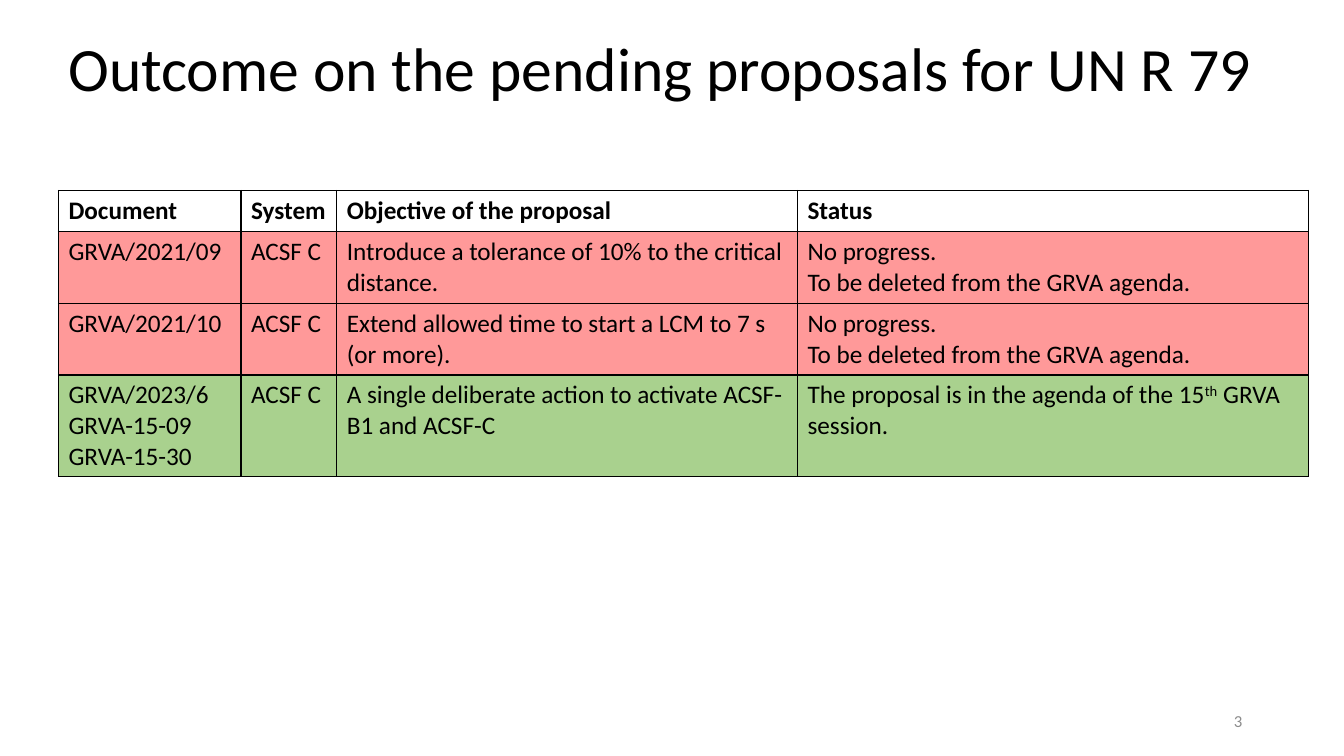
from lxml import etree
from pptx import Presentation
from pptx.dml.color import RGBColor
from pptx.enum.text import MSO_ANCHOR as Anchor, PP_ALIGN as Align
from pptx.oxml import parse_xml
from pptx.oxml.ns import nsdecls, qn
from pptx.util import Inches, Pt

BLACK, GREY, WHITE = "000000", "8C8C8C", "FFFFFF"
RED, GREEN = "FF9999", "A9D18E"


def rgb(color):
    return RGBColor.from_string(color)


def add_run(p, text, size, color=BLACK, bold=False):
    r = p.add_run()
    r.text = text
    r.font.name = "Calibri"
    r.font.size = Pt(size)
    r.font.bold = bold
    r.font.color.rgb = rgb(color)
    return r


prs = Presentation()
prs.slide_width, prs.slide_height = Inches(13.33), Inches(7.5)
s = prs.slides.add_slide(prs.slide_layouts[6])

# Title and slide number
for text, box, size, color, align, spacing in [
    ("Outcome on the pending proposals for UN R 79",
     (0.58, 0.31, 12.09, 0.79), 44, BLACK, Align.LEFT, 0.9),
    ("3", (9.42, 6.95, 3, 0.4), 12, GREY, Align.RIGHT, 1.0),
]:
    tf = s.shapes.add_textbox(*[Inches(v) for v in box]).text_frame
    tf.word_wrap = True
    tf.vertical_anchor = Anchor.MIDDLE
    p = tf.paragraphs[0]
    p.alignment = align
    p.line_spacing = spacing
    add_run(p, text, size, color)

# Proposals: fill, then one list of paragraphs per cell.
# "|" is a line break, text between "^" marks is superscript.
no_progress = ["No progress.", "To be deleted from the GRVA agenda."]
proposals = [
    (WHITE, [["Document"], ["System"], ["Objective of the proposal"], ["Status"]]),
    (RED, [["GRVA/2021/09"], ["ACSF C"],
           ["Introduce a tolerance of 10% to the critical distance."], no_progress]),
    (RED, [["GRVA/2021/10"], ["ACSF C"],
           ["Extend allowed time to start a LCM to 7 s |(or more)."], no_progress]),
    (GREEN, [["GRVA/2023/6", "GRVA-15-09", "GRVA-15-30"], ["ACSF C"],
             ["A single deliberate action to activate ACSF-B1 and ACSF-C"],
             ["The proposal is in the agenda of the 15^th^ GRVA session."]]),
]
col_widths = [1.81, 0.95, 4.57, 5.07]
row_heights = [0.41, 0.71, 0.71, 1.01]

table = s.shapes.add_table(
    len(row_heights), len(col_widths), Inches(0.58), Inches(1.89),
    Inches(sum(col_widths)), Inches(sum(row_heights))).table
table.horz_banding = False
for column, width in zip(table.columns, col_widths):
    column.width = Inches(width)
for row, height in zip(table.rows, row_heights):
    row.height = Inches(height)

for i, (fill, contents) in enumerate(proposals):
    for j, paragraphs in enumerate(contents):
        cell = table.cell(i, j)
        tf = cell.text_frame
        for k, paragraph in enumerate(paragraphs):
            p = tf.add_paragraph() if k else tf.paragraphs[0]
            for n, line in enumerate(paragraph.split("|")):
                if n:
                    p.add_line_break()
                for m, text in enumerate(line.split("^")):
                    r = add_run(p, text, 18, bold=i == 0)
                    if m % 2:
                        r.font._element.set("baseline", "30000")

        # Borders come before the fill in the cell properties
        tcPr = cell._tc.get_or_add_tcPr()
        for side in ("lnL", "lnR", "lnT", "lnB"):
            ln = etree.SubElement(tcPr, qn(f"a:{side}"), w=str(Pt(1)))
            ln.append(parse_xml(
                f'<a:solidFill {nsdecls("a")}><a:srgbClr val="{BLACK}"/></a:solidFill>'))
        cell.fill.solid()
        cell.fill.fore_color.rgb = rgb(fill)

prs.save("out.pptx")
